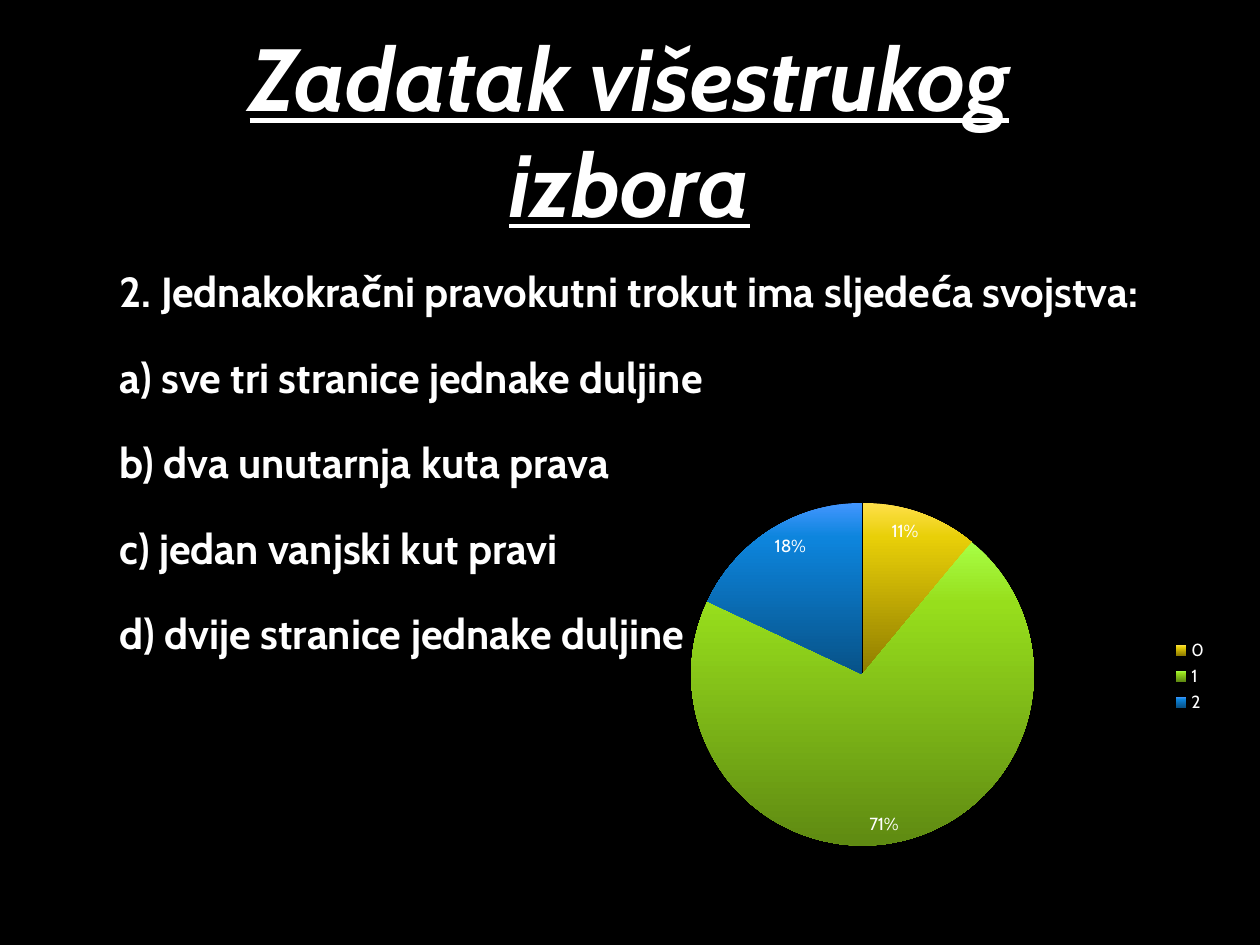
from copy import deepcopy

from lxml import etree
from pptx import Presentation
from pptx.chart.data import CategoryChartData
from pptx.dml.color import RGBColor
from pptx.enum.chart import XL_CHART_TYPE, XL_LABEL_POSITION, XL_LEGEND_POSITION
from pptx.enum.text import MSO_ANCHOR, MSO_AUTO_SIZE, PP_ALIGN
from pptx.oxml import parse_xml
from pptx.oxml.ns import nsdecls, qn
from pptx.util import Cm, Pt

BLACK = RGBColor(0x00, 0x00, 0x00)
WHITE = RGBColor(0xFF, 0xFF, 0xFF)
# Light top, main colour and dark bottom of each slice
SLICE_COLOURS = [
    (RGBColor(0xFF, 0xE0, 0x4A), RGBColor(0xE8, 0xCF, 0x08), RGBColor(0x8F, 0x7C, 0x00)),
    (RGBColor(0xA8, 0xFF, 0x45), RGBColor(0x97, 0xDE, 0x1C), RGBColor(0x5F, 0x8A, 0x12)),
    (RGBColor(0x43, 0x96, 0xFF), RGBColor(0x0D, 0x85, 0xDD), RGBColor(0x07, 0x52, 0x88)),
]
STOP_POSITIONS = (0, 0.2, 1)
FONT = "Cabin"


def write_paragraph(paragraph, text, size, align=PP_ALIGN.LEFT, space_before=0,
                    italic=False, underline=False):
    properties = paragraph._p.get_or_add_pPr()
    properties.set("marL", "0")
    properties.set("indent", "0")
    etree.SubElement(properties, qn("a:buNone"))
    paragraph.alignment = align
    paragraph.space_before = Pt(space_before)
    run = paragraph.add_run()
    run.text = text
    font = run.font
    font.name = FONT
    font.size = Pt(size)
    font.bold = True
    font.italic = italic
    font.underline = underline
    font.color.rgb = WHITE


presentation = Presentation()
presentation.slide_width = Cm(25.4)
presentation.slide_height = Cm(19.05)
slide = presentation.slides.add_slide(presentation.slide_layouts[1])
slide.background.fill.solid()
slide.background.fill.fore_color.rgb = BLACK

# Title and question
title = slide.shapes.title
title.left, title.top, title.width, title.height = Cm(2.16), Cm(0.3), Cm(21.06), Cm(4.6)
title.text_frame.auto_size = MSO_AUTO_SIZE.NONE
title.text_frame.vertical_anchor = MSO_ANCHOR.MIDDLE
write_paragraph(title.text_frame.paragraphs[0], "Zadatak višestrukog izbora", 50.4,
                align=PP_ALIGN.CENTER, italic=True, underline=True)

body = slide.placeholders[1]
body.left, body.top, body.width, body.height = Cm(2.16), Cm(5.23), Cm(21.06), Cm(10.97)
body.text_frame.auto_size = MSO_AUTO_SIZE.NONE
body.text_frame.margin_right = 0
question_lines = [
    "2. Jednakokračni pravokutni trokut ima sljedeća svojstva:",
    "a) sve tri stranice jednake duljine",
    "b) dva unutarnja kuta prava",
    "c) jedan vanjski kut pravi",
    "d) dvije stranice jednake duljine",
]
for index, line in enumerate(question_lines):
    paragraph = body.text_frame.add_paragraph() if index else body.text_frame.paragraphs[0]
    write_paragraph(paragraph, line, 24, space_before=20 if index else 0)

# Pie chart of the points scored
chart_data = CategoryChartData()
chart_data.categories = ["0", "1", "2"]
chart_data.add_series("Series 1", (11, 71, 18))
chart = slide.shapes.add_chart(XL_CHART_TYPE.PIE, Cm(12.88), Cm(9.42), Cm(11.71), Cm(8.43),
                               chart_data).chart
chart.has_title = False
chart.font.name = FONT
chart.font.size = Pt(10)
chart.font.color.rgb = WHITE
chart.has_legend = True
chart.legend.position = XL_LEGEND_POSITION.RIGHT
chart.legend.include_in_layout = False

plot = chart.plots[0]
plot.vary_by_categories = True
plot.has_data_labels = True
labels = plot.data_labels
labels.show_percentage = True
labels.show_value = False
labels.number_format = "0%"
labels.number_format_is_linked = False
labels.position = XL_LABEL_POSITION.INSIDE_END
labels.font.name = FONT
labels.font.size = Pt(10)
labels.font.color.rgb = WHITE

for index, colours in enumerate(SLICE_COLOURS):
    slice_format = plot.series[0].points[index].format
    slice_format.line.fill.background()
    fill = slice_format.fill
    fill.gradient()
    fill.gradient_angle = 270
    stop_list = chart.element.findall(".//" + qn("a:gsLst"))[index]
    stop_list.insert(1, deepcopy(stop_list[0]))
    for stop, colour, position in zip(fill.gradient_stops, colours, STOP_POSITIONS):
        stop.color.rgb = colour
        stop.position = position

plot_area = chart.element.find(".//" + qn("c:plotArea"))
for old_layout in plot_area.findall(qn("c:layout")):
    plot_area.remove(old_layout)
plot_area.insert(0, parse_xml(
    f'<c:layout {nsdecls("c")}><c:manualLayout><c:layoutTarget val="inner"/>'
    '<c:xMode val="edge"/><c:yMode val="edge"/><c:x val="0.09"/><c:y val="0.02"/>'
    '<c:w val="0.59"/><c:h val="0.95"/></c:manualLayout></c:layout>'))

presentation.save("out.pptx")
